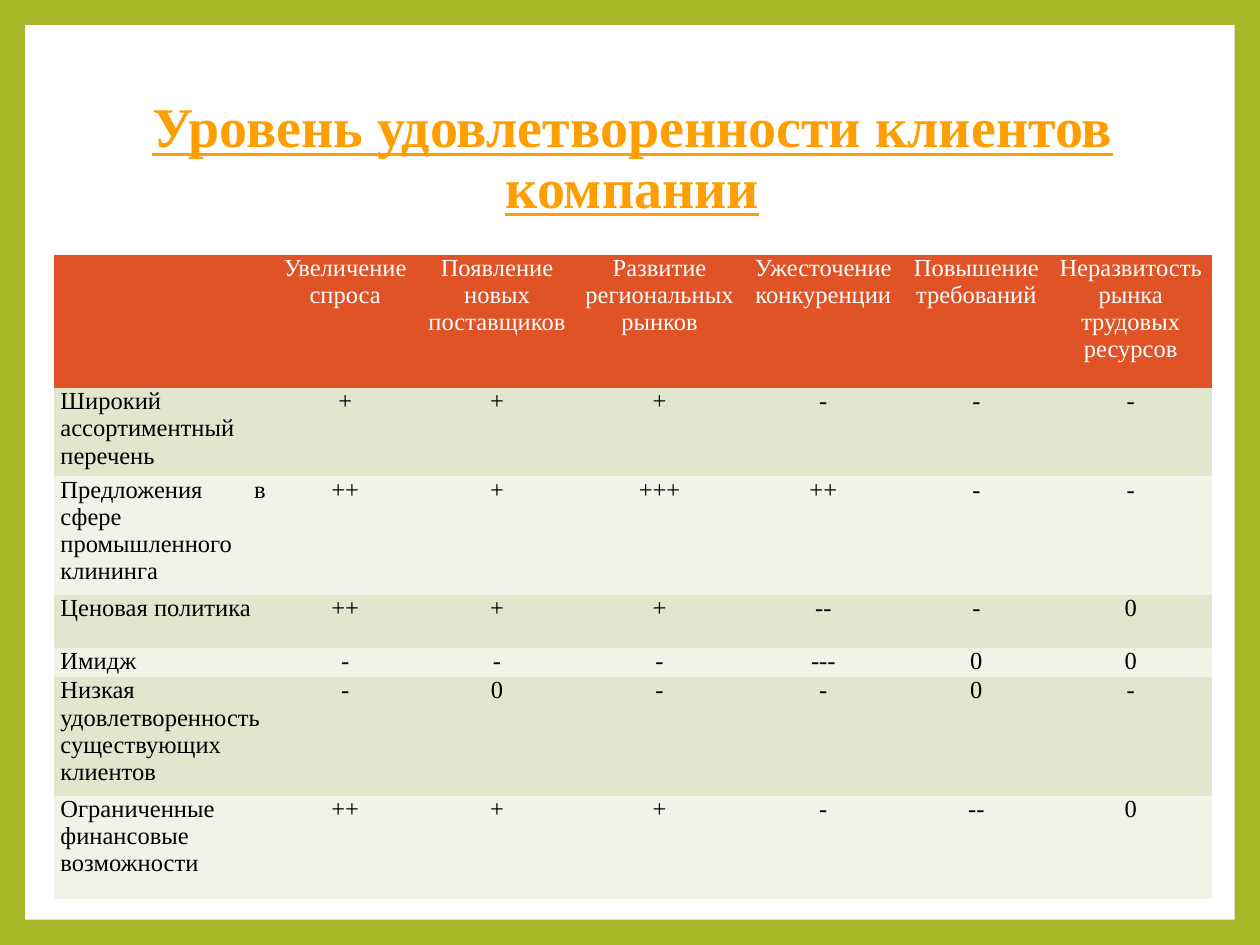
from dataclasses import dataclass

from pptx import Presentation
from pptx.dml.color import RGBColor as Rgb
from pptx.enum.shapes import MSO_SHAPE as Shape
from pptx.enum.text import MSO_ANCHOR as Anchor, PP_ALIGN as Align
from pptx.oxml.ns import qn
from pptx.slide import Slide
from pptx.table import _Cell as Cell
from pptx.util import Inches, Pt


@dataclass(frozen=True)
class Theme:
    font: str = "Times New Roman"
    title_size: int = 32
    table_size: int = 14
    frame: str = "A6B727"
    panel: str = "FFFFFF"
    title: str = "FE9E00"
    header_fill: str = "DF5327"
    header_text: str = "FFFFFF"
    body_text: str = "000000"
    bands: tuple[str, str] = ("E1E6CD", "F1F3E8")
    plain_style: str = "{2D5ABB26-0587-4C30-8999-92F81FD0307C}"


@dataclass(frozen=True)
class Factor:
    name: str
    width: float


@dataclass(frozen=True)
class Criterion:
    name: str
    marks: str
    height: float


THEME = Theme()
CRITERION_WIDTH = 1.73
HEADER_HEIGHT = 1.06

FACTORS = [
    Factor("Увеличение спроса", 1.16),
    Factor("Появление новых поставщиков", 1.25),
    Factor("Развитие региональных рынков", 1.33),
    Factor("Ужесточение конкуренции", 1.27),
    Factor("Повышение требований", 1.16),
    Factor("Неразвитость рынка трудовых ресурсов", 1.29),
]

CRITERIA = [
    Criterion("Широкий ассортиментный перечень", "+ + + - - -", 0.7),
    Criterion("Предложения в сфере промышленного клининга", "++ + +++ ++ - -", 0.94),
    Criterion("Ценовая политика", "++ + + -- - 0", 0.42),
    Criterion("Имидж", "- - - --- 0 0", 0.23),
    Criterion("Низкая удовлетворенность существующих клиентов", "- 0 - - 0 -", 0.94),
    Criterion("Ограниченные финансовые возможности", "++ + + - -- 0", 0.82),
]


def draw_background(slide: Slide) -> None:
    slide.background.fill.solid()
    slide.background.fill.fore_color.rgb = Rgb.from_string(THEME.frame)
    panel = slide.shapes.add_shape(
        Shape.RECTANGLE, Inches(0.2), Inches(0.2), Inches(9.6), Inches(7.1)
    )
    panel.shadow.inherit = False
    panel.fill.solid()
    panel.fill.fore_color.rgb = Rgb.from_string(THEME.panel)
    panel.line.fill.background()


def draw_title(slide: Slide, text: str) -> None:
    title = slide.shapes.add_textbox(
        Inches(0.97), Inches(0.53), Inches(8.1), Inches(1.48)
    )
    frame = title.text_frame
    frame.word_wrap = True
    frame.vertical_anchor = Anchor.MIDDLE
    frame.text = text
    paragraph = frame.paragraphs[0]
    paragraph.alignment = Align.CENTER
    paragraph.line_spacing = 0.9
    font = paragraph.runs[0].font
    font.name = THEME.font
    font.size = Pt(THEME.title_size)
    font.bold = font.underline = True
    font.color.rgb = Rgb.from_string(THEME.title)


def fill_cell(cell: Cell, text: str, fill: str, color: str, align: Align) -> None:
    cell.fill.solid()
    cell.fill.fore_color.rgb = Rgb.from_string(fill)
    cell.margin_left = cell.margin_right = Inches(0.05)
    cell.margin_top = cell.margin_bottom = 0
    cell.text_frame.text = text
    paragraph = cell.text_frame.paragraphs[0]
    paragraph.alignment = align
    for run in paragraph.runs:
        run.font.name = THEME.font
        run.font.size = Pt(THEME.table_size)
        run.font.color.rgb = Rgb.from_string(color)


def draw_ratings(slide: Slide, factors: list[Factor], criteria: list[Criterion]) -> None:
    widths = [CRITERION_WIDTH] + [factor.width for factor in factors]
    heights = [HEADER_HEIGHT] + [criterion.height for criterion in criteria]
    ratings = slide.shapes.add_table(
        len(heights), len(widths), Inches(0.43), Inches(2.02),
        Inches(sum(widths)), Inches(sum(heights)),
    ).table
    ratings._tbl.tblPr.find(qn("a:tableStyleId")).text = THEME.plain_style
    for column, width in zip(ratings.columns, widths):
        column.width = Inches(width)
    for row, height in zip(ratings.rows, heights):
        row.height = Inches(height)

    header = [""] + [factor.name for factor in factors]
    for column, name in enumerate(header):
        fill_cell(ratings.cell(0, column), name, THEME.header_fill,
                  THEME.header_text, Align.CENTER)
    for row, criterion in enumerate(criteria, start=1):
        band = THEME.bands[(row - 1) % 2]
        for column, text in enumerate([criterion.name, *criterion.marks.split()]):
            align = Align.CENTER if column else Align.JUSTIFY
            fill_cell(ratings.cell(row, column), text, band, THEME.body_text, align)


def main() -> None:
    deck = Presentation()
    deck.slide_width, deck.slide_height = Inches(10), Inches(7.5)
    slide = deck.slides.add_slide(deck.slide_layouts[6])
    draw_background(slide)
    draw_title(slide, "Уровень удовлетворенности клиентов компании")
    draw_ratings(slide, FACTORS, CRITERIA)
    deck.save("out.pptx")


if __name__ == "__main__":
    main()
